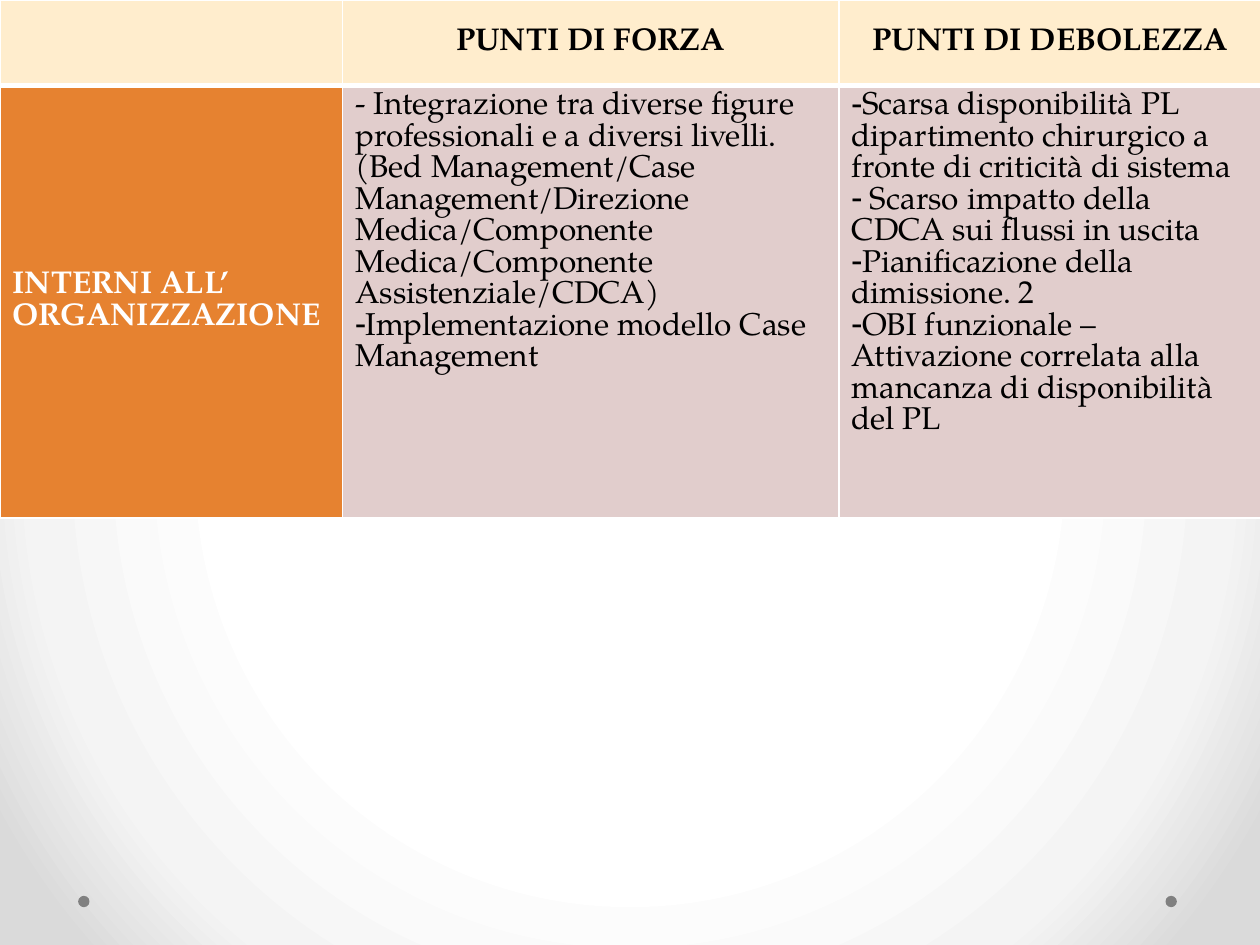
import pptx
import pptx.dml.color
import pptx.enum.shapes
import pptx.enum.text
import pptx.oxml
import pptx.oxml.ns
import pptx.util
from pptx.util import Inches

COLORS = {
    "header": "FFEDCD", "label": "E68230", "body": "E1CDCC",
    "black": "000000", "white": "FFFFFF", "dot": "808080",
}
BACKDROP = [(50, "FFFFFF"), (76, "F4F4F4"), (92, "DADADA")]
FONT = "TeX Gyre Pagella"
NS = pptx.oxml.ns.nsdecls("a")


def rgb(name):
    return pptx.dml.color.RGBColor.from_string(COLORS[name])


def set_borders(cell, top, bottom):
    """Draw white cell borders; top and bottom are widths in points."""
    widths = {"lnL": 1, "lnR": 1, "lnT": top, "lnB": bottom}
    properties = cell._tc.get_or_add_tcPr()
    for position, (side, width) in enumerate(widths.items()):
        properties.insert(position, pptx.oxml.parse_xml(
            f'<a:{side} {NS} w="{pptx.util.Pt(width)}"><a:solidFill>'
            f'<a:srgbClr val="{COLORS["white"]}"/></a:solidFill></a:{side}>'))


presentation = pptx.Presentation()
presentation.slide_width = Inches(10)
presentation.slide_height = Inches(7.5)
slide = presentation.slides.add_slide(presentation.slide_layouts[6])

# Radial background
backdrop = slide.background.fill
backdrop.gradient()
gradient = slide.background._cSld.find(".//" + pptx.oxml.ns.qn("a:gradFill"))
stops = "".join(f'<a:gs pos="{position * 1000}"><a:srgbClr val="{color}"/></a:gs>'
                for position, color in BACKDROP)
gradient.getparent().replace(gradient, pptx.oxml.parse_xml(
    f'<a:gradFill {NS} rotWithShape="1"><a:gsLst>{stops}</a:gsLst><a:path path="circle">'
    '<a:fillToRect l="50000" t="50000" r="50000" b="50000"/></a:path></a:gradFill>'))

# Footer dots
for left in (9.25, 0.62):
    dot = slide.shapes.add_shape(pptx.enum.shapes.MSO_SHAPE.OVAL, Inches(left),
                                 Inches(7.11), Inches(0.09), Inches(0.09))
    dot.shadow.inherit = False
    dot.fill.solid()
    dot.fill.fore_color.rgb = rgb("dot")
    dot.line.fill.background()

# Strengths and weaknesses; a leading "*" marks a dash bullet
ROWS = [
    [[], ["PUNTI DI FORZA"], ["PUNTI DI DEBOLEZZA"]],
    [
        ["INTERNI ALL’", "ORGANIZZAZIONE"],
        ["- Integrazione tra diverse figure professionali e a diversi livelli. "
         "(Bed Management/Case Management/Direzione Medica/Componente "
         "Medica/Componente Assistenziale/CDCA)",
         "*Implementazione modello Case Management"],
        ["*Scarsa disponibilità PL dipartimento chirurgico a fronte di criticità di sistema",
         "* Scarso impatto della CDCA sui flussi in uscita",
         "*Pianificazione della dimissione. 2",
         "*OBI funzionale – Attivazione correlata alla mancanza di disponibilità del PL"],
    ],
]
analysis = slide.shapes.add_table(2, 3, 0, 0, Inches(10), Inches(4.11)).table
for column, width in zip(analysis.columns, (2.72, 3.94, 3.35)):
    column.width = Inches(width)
for row, height in zip(analysis.rows, (0.68, 3.43)):
    row.height = Inches(height)

for r, row_texts in enumerate(ROWS):
    for c, texts in enumerate(row_texts):
        cell = analysis.cell(r, c)
        is_header = r == 0
        is_label = r == 1 and c == 0
        cell.fill.solid()
        cell.fill.fore_color.rgb = rgb("header" if is_header else "label" if is_label else "body")
        set_borders(cell, top=1 if is_header else 3, bottom=3 if is_header else 1)
        if is_header or is_label:
            cell.vertical_anchor = pptx.enum.text.MSO_ANCHOR.MIDDLE
        for i, text in enumerate(texts):
            frame = cell.text_frame
            paragraph = frame.add_paragraph() if i else frame.paragraphs[0]
            paragraph.text = text.removeprefix("*")
            paragraph.line_spacing = pptx.util.Pt(18)
            if is_header:
                paragraph.alignment = pptx.enum.text.PP_ALIGN.CENTER
            paragraph.font.name = FONT
            paragraph.font.size = pptx.util.Pt(18)
            paragraph.font.bold = is_header or is_label
            paragraph.font.color.rgb = rgb("white" if is_label else "black")
            if text.startswith("*"):
                properties = paragraph._p.get_or_add_pPr()
                properties.set("marL", "0")
                properties.set("indent", "0")
                bullet = pptx.oxml.parse_xml(f'<a:buChar {NS} char="-"/>')
                properties.find(pptx.oxml.ns.qn("a:defRPr")).addprevious(bullet)

presentation.save("out.pptx")
